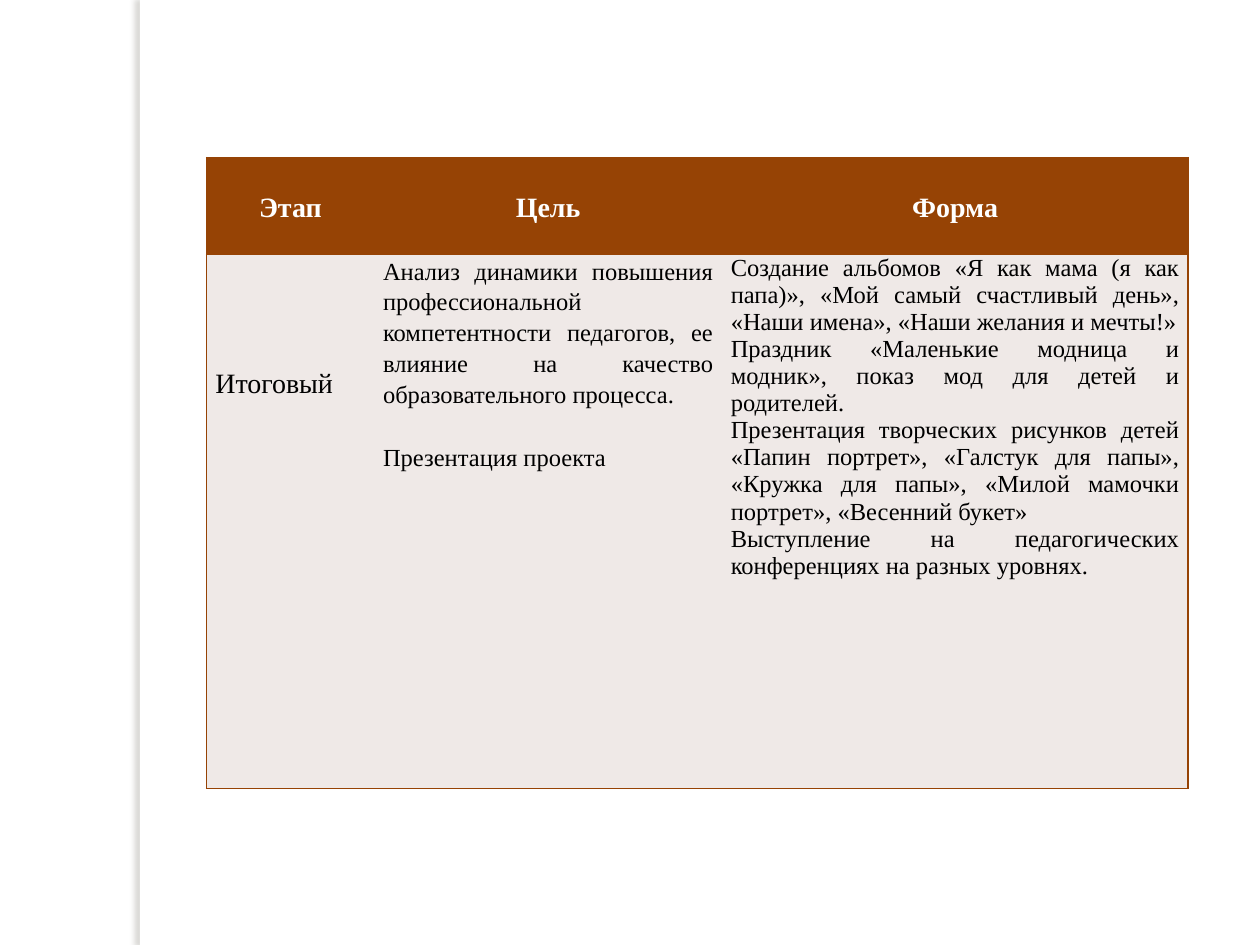
from dataclasses import dataclass

from lxml import etree
from pptx import Presentation
from pptx.dml.color import RGBColor
from pptx.enum.shapes import MSO_SHAPE
from pptx.enum.text import MSO_ANCHOR, PP_ALIGN
from pptx.oxml.ns import qn
from pptx.util import Inches, Pt

RECTANGLE = MSO_SHAPE.RECTANGLE
TOP, MIDDLE = MSO_ANCHOR.TOP, MSO_ANCHOR.MIDDLE
LEFT, CENTER, JUSTIFY = PP_ALIGN.LEFT, PP_ALIGN.CENTER, PP_ALIGN.JUSTIFY
PLAIN_TABLE = "{2D5ABB26-0587-4C30-8999-92F81FD0307C}"


@dataclass(frozen=True)
class Theme:
    font: str = "Times New Roman"
    paper: str = "FFFFFF"
    ink: str = "000000"
    brown: str = "964305"
    pale: str = "EFE9E7"
    shade: str = "736F63"
    heading: int = 16
    body: int = 14


@dataclass(frozen=True)
class CellStyle:
    fill: str
    color: str
    size: int
    align: int = LEFT
    anchor: int = TOP
    bold: bool = False
    line_spacing: float = 1.0
    gap_before: float = 0
    gap_after: float = 0
    top_inset: float = 0


class SlideBuilder:
    """Draws themed elements on one slide, placed by shares of its size."""

    def __init__(self, deck, theme):
        self.deck = deck
        self.theme = theme
        self.slide = deck.slides.add_slide(deck.slide_layouts[6])

    def place(self, left, top, width, height):
        across, down = self.deck.slide_width, self.deck.slide_height
        return [round(share * side) for share, side in
                zip((left, top, width, height), (across, down, across, down))]

    def shaded_strip(self, *shares):
        strip = self.slide.shapes.add_shape(RECTANGLE, *self.place(*shares))
        strip.fill.solid()
        strip.fill.fore_color.rgb = RGBColor.from_string(self.theme.paper)
        strip.line.fill.background()
        strip.shadow.inherit = False
        effects = strip.element.spPr.find(qn("a:effectLst"))
        shadow = etree.SubElement(effects, qn("a:outerShdw"), blurRad=str(Pt(3)),
                                  dist=str(Pt(3)), dir="10800000", rotWithShape="0")
        color = etree.SubElement(shadow, qn("a:srgbClr"), val=self.theme.shade)
        etree.SubElement(color, qn("a:alpha"), val="25000")

    def table(self, shares, columns, rows, content):
        frame = self.slide.shapes.add_table(len(rows), len(columns), *self.place(*shares))
        table = frame.table
        table._tbl.tblPr.find(qn("a:tableStyleId")).text = PLAIN_TABLE
        for column, width in zip(table.columns, columns):
            column.width = Inches(width)
        for row, height in zip(table.rows, rows):
            row.height = Inches(height)
        for row_index, line in enumerate(content):
            for column_index, (style, texts) in enumerate(line):
                sides = {"L": column_index == 0, "R": column_index == len(columns) - 1,
                         "T": True, "B": True}
                cell = table.cell(row_index, column_index)
                self.borders(cell, sides)
                self.fill_cell(cell, style, texts)

    def borders(self, cell, sides):
        properties = cell._tc.get_or_add_tcPr()
        for side, visible in sides.items():
            line = etree.SubElement(properties, qn(f"a:ln{side}"), w=str(Pt(1)))
            if visible:
                fill = etree.SubElement(line, qn("a:solidFill"))
                etree.SubElement(fill, qn("a:srgbClr"), val=self.theme.brown)
            else:
                etree.SubElement(line, qn("a:noFill"))

    def fill_cell(self, cell, style, texts):
        cell.fill.solid()
        cell.fill.fore_color.rgb = RGBColor.from_string(style.fill)
        cell.vertical_anchor = style.anchor
        cell.margin_left = cell.margin_right = Inches(0.07)
        cell.margin_top, cell.margin_bottom = Inches(style.top_inset), 0
        for index, text in enumerate(texts):
            frame = cell.text_frame
            para = frame.add_paragraph() if index else frame.paragraphs[0]
            para.alignment = style.align
            para.line_spacing = style.line_spacing
            para.space_before = Pt(style.gap_before if index else 0)
            para.space_after = Pt(style.gap_after)
            span = para.add_run()
            span.text = text
            span.font.name = self.theme.font
            span.font.size = Pt(style.size)
            span.font.bold = style.bold
            span.font.color.rgb = RGBColor.from_string(style.color)


def main():
    deck = Presentation()
    deck.slide_width, deck.slide_height = Inches(10), Inches(7.5)
    theme = Theme()
    page = SlideBuilder(deck, theme)
    header = CellStyle(theme.brown, theme.paper, theme.heading, CENTER, MIDDLE,
                       bold=True, line_spacing=1.15, gap_after=10)
    stage = CellStyle(theme.pale, theme.ink, theme.heading,
                      line_spacing=1.14, top_inset=0.87)
    goal = CellStyle(theme.pale, theme.ink, theme.body, JUSTIFY,
                     line_spacing=1.14, gap_before=18.4)
    form = CellStyle(theme.pale, theme.ink, theme.body, JUSTIFY)

    page.shaded_strip(0.111, 0, 0.008, 1)
    columns, rows = (1.33, 2.76, 3.7), (0.77, 4.24)
    page.table((0.164, 1 / 6, sum(columns) / 10, sum(rows) / 7.5), columns, rows, [
        [(header, [title]) for title in ("Этап", "Цель", "Форма")],
        [
            (stage, ["Итоговый"]),
            (goal, [
                "Анализ динамики повышения профессиональной компетентности педагогов, "
                "ее влияние на качество образовательного процесса.",
                "Презентация проекта",
            ]),
            (form, [
                "Создание альбомов «Я как мама (я как папа)», «Мой самый счастливый "
                "день», «Наши имена», «Наши желания и мечты!»",
                "Праздник «Маленькие модница и модник», показ мод для детей и родителей.",
                "Презентация творческих рисунков детей «Папин портрет», «Галстук для "
                "папы», «Кружка для папы», «Милой мамочки портрет», «Весенний букет»",
                "Выступление на педагогических конференциях на разных уровнях.",
            ]),
        ],
    ])
    deck.save("out.pptx")


if __name__ == "__main__":
    main()
